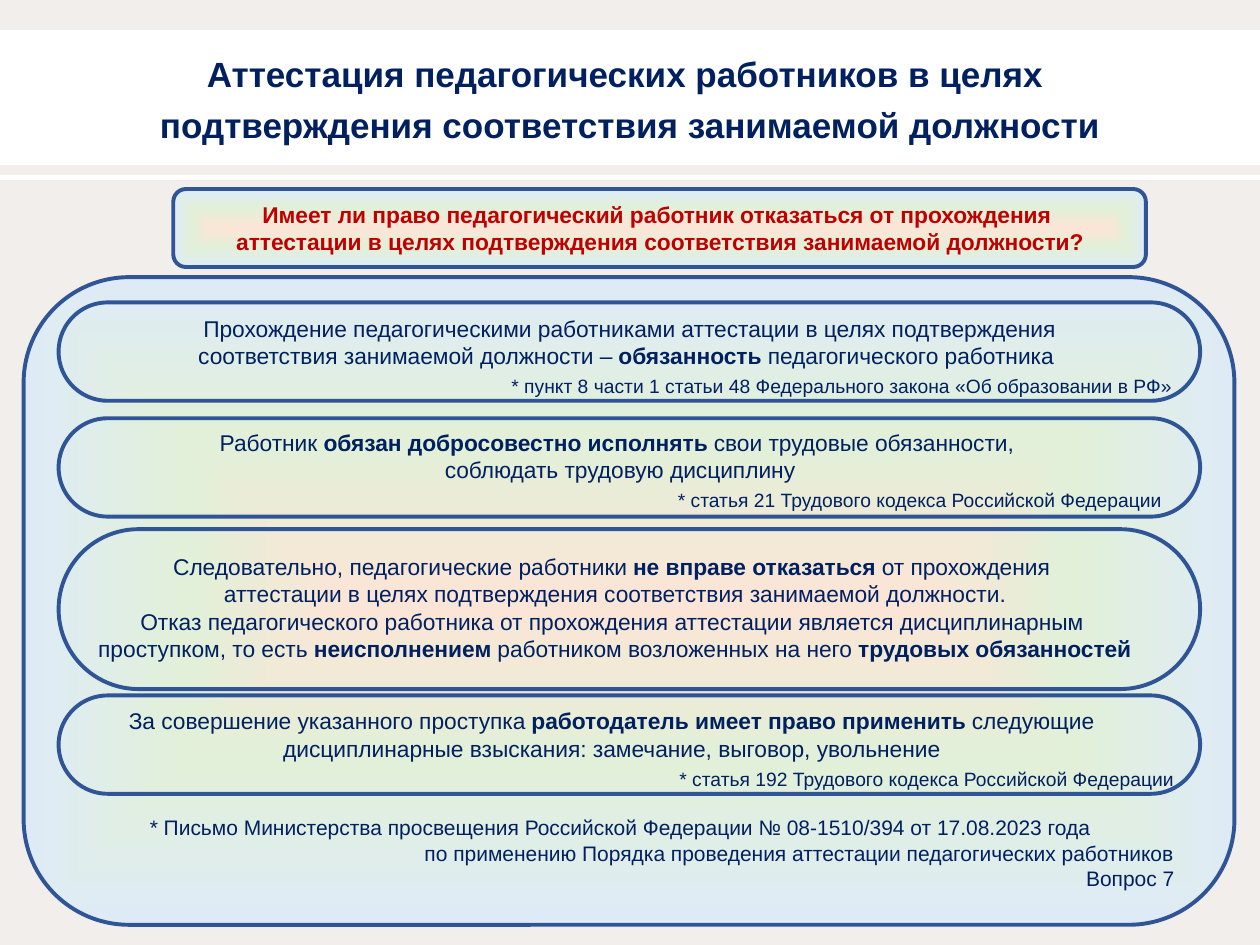
from dataclasses import dataclass

from pptx import Presentation
from pptx.dml.color import RGBColor
from pptx.enum.shapes import MSO_SHAPE
from pptx.enum.text import MSO_ANCHOR, PP_ALIGN
from pptx.oxml import parse_xml
from pptx.oxml.ns import nsdecls, qn
from pptx.util import Pt

NAVY, RED, BLUE, WHITE, PAPER = "002060", "C00000", "2F5597", "FFFFFF", "F1EEEB"
GLOW = ((0, "FBE5D6"), (50, "E2F0D9"), (100, "DEEBF7"))
CENTER, RIGHT = PP_ALIGN.CENTER, PP_ALIGN.RIGHT


@dataclass(frozen=True)
class Line:
    """A paragraph; text between ** marks is bold."""
    text: str
    size: float = 13
    align: PP_ALIGN = CENTER
    color: str = NAVY
    before: float = 0
    spacing: float = 1.0
    indent: float = 0


@dataclass(frozen=True)
class Box:
    left: float
    top: float
    width: float
    height: float
    corner: float = 0


def citation(text: str, indent: float) -> Line:
    return Line(text, size=11, align=RIGHT, before=3, indent=indent)


TITLE = (Line("**Аттестация педагогических работников в целях \v"
              "подтверждения соответствия занимаемой должности**", size=20, spacing=1.2),)
QUESTION = (
    Line("**Имеет ли право педагогический работник отказаться от прохождения **", color=RED),
    Line("**аттестации в целях подтверждения соответствия занимаемой должности?**", color=RED),
)
ANSWER = (
    # Duty to be certified
    Line("Прохождение педагогическими работниками аттестации в целях подтверждения"),
    Line("соответствия занимаемой должности – **обязанность** педагогического работника "),
    citation("* пункт 8 части 1 статьи 48 Федерального закона «Об образовании в РФ»", 10.5),
    # Duty to work in good faith
    Line("Работник **обязан добросовестно исполнять **свои трудовые обязанности, ",
         before=17.8),
    Line("соблюдать трудовую дисциплину"),
    citation("* статья 21 Трудового кодекса Российской Федерации", 16.5),
    # Conclusion
    Line("Следовательно, педагогические работники **не вправе отказаться** от прохождения ",
         before=23.6),
    Line("аттестации в целях подтверждения соответствия занимаемой должности."),
    Line("Отказ педагогического работника от прохождения аттестации "
         "является дисциплинарным "),
    Line("проступком, то есть **неисполнением** работником возложенных на него "
         "**трудовых обязанностей**"),
    # Penalties
    Line("За совершение указанного проступка **работодатель имеет право применить "
         "**следующие ", before=25.6),
    Line("дисциплинарные взыскания: замечание, выговор, увольнение "),
    citation("* статья 192 Трудового кодекса Российской Федерации", 9.5),
    # Source
    Line("* Письмо Министерства просвещения Российской Федерации "
         "№ 08-1510/394 от 17.08.2023 года", size=12, before=14.2),
    Line("по применению Порядка проведения аттестации педагогических работников",
         size=12, align=RIGHT),
    Line("Вопрос 7", size=12, align=RIGHT),
)
# Top and height of the outline round each step of the answer
OUTLINES = ((172.8, 56.2), (239, 56.2), (302.4, 91.4), (397.4, 56.2))


def rgb(value: str) -> RGBColor:
    return RGBColor.from_string(value)


def apply(target, values: dict) -> None:
    for name, value in values.items():
        setattr(target, name, value)


def write(shape, lines: tuple, margins=(0, 0, 0, 0), anchor=MSO_ANCHOR.MIDDLE) -> None:
    """Fill a shape with paragraphs; margins are left, top, right, bottom."""
    frame = shape.text_frame
    apply(frame, {"word_wrap": True, "vertical_anchor": anchor})
    sides = ("margin_left", "margin_top", "margin_right", "margin_bottom")
    apply(frame, {side: Pt(size) for side, size in zip(sides, margins)})
    for index, line in enumerate(lines):
        para = frame.add_paragraph() if index else frame.paragraphs[0]
        apply(para, {"alignment": line.align, "space_before": Pt(line.before),
                     "line_spacing": line.spacing})
        if line.indent:
            para._p.get_or_add_pPr().set("marR", str(Pt(line.indent)))
        for part, text in enumerate(line.text.split("**")):
            for row, piece in enumerate(text.split("\v")):
                if row:
                    para.add_line_break()
                if piece:
                    span = para.add_run()
                    span.text = piece
                    apply(span.font, {"name": "Arial", "size": Pt(line.size),
                                      "bold": part % 2 == 1})
                    span.font.color.rgb = rgb(line.color)


def draw_box(page, box: Box, fill: str | None = None, line: str | None = None):
    kind = MSO_SHAPE.ROUNDED_RECTANGLE if box.corner else MSO_SHAPE.RECTANGLE
    shape = page.shapes.add_shape(
        kind, Pt(box.left), Pt(box.top), Pt(box.width), Pt(box.height))
    shape.shadow.inherit = False
    if box.corner:
        shape.adjustments[0] = box.corner
    if fill:
        shape.fill.solid()
        shape.fill.fore_color.rgb = rgb(fill)
    else:
        shape.fill.background()
    if line:
        shape.line.color.rgb = rgb(line)
        shape.line.width = Pt(2.25)
    else:
        shape.line.fill.background()
    return shape


def add_glow(shape) -> None:
    """Give an unfilled shape a gradient that spreads from its centre."""
    stops = "".join(f'<a:gs pos="{place * 1000}"><a:srgbClr val="{color}"/></a:gs>'
                    for place, color in GLOW)
    gradient = parse_xml(
        f'<a:gradFill {nsdecls("a")} rotWithShape="1"><a:gsLst>{stops}</a:gsLst>'
        '<a:path path="shape"><a:fillToRect l="50000" t="50000" r="50000" b="50000"/>'
        '</a:path></a:gradFill>')
    properties = shape._element.spPr
    properties.replace(properties.find(qn("a:noFill")), gradient)


def main() -> None:
    deck = Presentation()
    apply(deck, {"slide_width": Pt(720), "slide_height": Pt(540)})
    page = deck.slides.add_slide(deck.slide_layouts[6])
    page.background.fill.solid()
    page.background.fill.fore_color.rgb = rgb(PAPER)

    # Title band and the thin rule under it
    draw_box(page, Box(0, 17.3, 720, 77), fill=WHITE)
    title = page.shapes.add_textbox(Pt(0), Pt(17), Pt(720), Pt(74.2))
    write(title, TITLE)
    draw_box(page, Box(0, 100, 720, 2.9), fill=WHITE)

    # Question
    question = draw_box(page, Box(99, 108, 555.8, 44.6, 0.163), line=BLUE)
    add_glow(question)
    write(question, QUESTION)

    # Panel with the whole answer
    panel = draw_box(page, Box(13.5, 158.4, 691.9, 370.1, 0.163), line=BLUE)
    add_glow(panel)
    write(panel, ANSWER, (7.2, 3.6, 7.2, 3.6), MSO_ANCHOR.TOP)

    # Outlines round the steps of the answer
    for top, height in OUTLINES:
        draw_box(page, Box(33.5, top, 652.3, height, 0.5), line=BLUE)

    deck.save("out.pptx")


if __name__ == "__main__":
    main()
